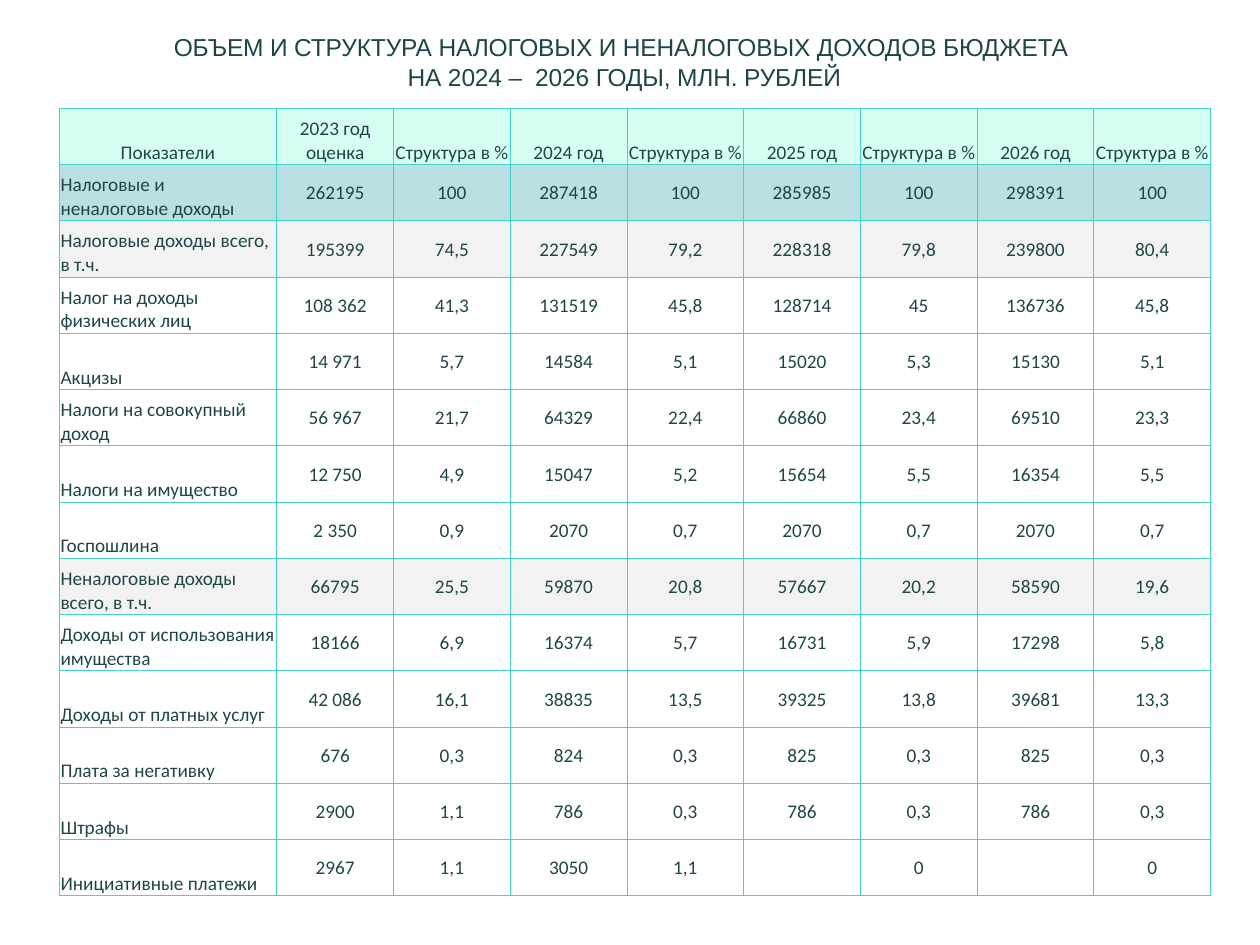
from copy import deepcopy
from dataclasses import dataclass

from lxml import etree
from pptx import Presentation
from pptx.dml.color import RGBColor
from pptx.enum.text import MSO_ANCHOR, PP_ALIGN
from pptx.oxml.ns import qn
from pptx.util import Cm, Pt

LEFT, CENTER = PP_ALIGN.LEFT, PP_ALIGN.CENTER
MIDDLE, BOTTOM = MSO_ANCHOR.MIDDLE, MSO_ANCHOR.BOTTOM


@dataclass(frozen=True)
class Theme:
    ink: str = "1E4649"
    line: str = "44D4C3"
    head: str = "D6FFF4"
    total: str = "BBE0E3"
    group: str = "F2F2F2"
    head_font: str = "Arial"
    body_font: str = "Calibri"
    head_size: int = 14
    body_size: int = 11
    rule: float = 0.5


THEME = Theme()

TITLE = (
    "ОБЪЕМ И СТРУКТУРА НАЛОГОВЫХ И НЕНАЛОГОВЫХ ДОХОДОВ БЮДЖЕТА \v"
    "НА 2024 –  2026 ГОДЫ, МЛН. РУБЛЕЙ"
)
SHARE = "Структура в %"
HEAD = ["Показатели"]
for year in ("2023 год оценка", "2024 год", "2025 год", "2026 год"):
    HEAD += [year, SHARE]

ROWS = [
    "Налоговые и неналоговые доходы|262195|100|287418|100|285985|100|298391|100",
    "Налоговые доходы всего, в т.ч.|195399|74,5|227549|79,2|228318|79,8|239800|80,4",
    "Налог на доходы физических лиц|108 362|41,3|131519|45,8|128714|45|136736|45,8",
    "Акцизы|14 971|5,7|14584|5,1|15020|5,3|15130|5,1",
    "Налоги на совокупный доход|56 967|21,7|64329|22,4|66860|23,4|69510|23,3",
    "Налоги на имущество|12 750|4,9|15047|5,2|15654|5,5|16354|5,5",
    "Госпошлина|2 350|0,9|2070|0,7|2070|0,7|2070|0,7",
    "Неналоговые доходы всего, в т.ч.|66795|25,5|59870|20,8|57667|20,2|58590|19,6",
    "Доходы от использования имущества|18166|6,9|16374|5,7|16731|5,9|17298|5,8",
    "Доходы от платных услуг|42 086|16,1|38835|13,5|39325|13,8|39681|13,3",
    "Плата за негативку|676|0,3|824|0,3|825|0,3|825|0,3",
    "Штрафы|2900|1,1|786|0,3|786|0,3|786|0,3",
    "Инициативные платежи|2967|1,1|3050|1,1||0||0",
]
GRID = [HEAD] + [row.split("|") for row in ROWS]
FILLS = {0: THEME.head, 1: THEME.total, 2: THEME.group, 8: THEME.group}


def apply(item, values):
    for name, value in values.items():
        setattr(item, name, value)


def style(runs, face, size):
    for run in runs:
        apply(run.font, {"name": face, "size": Pt(size)})
        run.font.color.rgb = RGBColor.from_string(THEME.ink)


def add_title(slide, box):
    frame = slide.shapes.add_textbox(*map(Cm, box)).text_frame
    apply(frame, {
        "word_wrap": True, "vertical_anchor": MIDDLE,
        "margin_left": 0, "margin_right": 0,
        "margin_top": Cm(0.03), "margin_bottom": 0,
    })
    para = frame.paragraphs[0]
    apply(para, {"text": TITLE, "alignment": CENTER, "space_before": Pt(1)})
    style(para.runs, THEME.head_font, THEME.head_size)
    for run in para.runs:
        run._r.get_or_add_rPr().set("spc", "-10")
    for gap in para._p.findall(qn("a:br")):
        gap.insert(0, deepcopy(para.runs[0]._r.rPr))


def add_lines(cell):
    props = cell._tc.get_or_add_tcPr()
    for side in "LRTB":
        line = etree.SubElement(props, qn(f"a:ln{side}"), w=str(Pt(THEME.rule)))
        fill = etree.SubElement(line, qn("a:solidFill"))
        etree.SubElement(fill, qn("a:srgbClr"), val=THEME.line)


def fill_cell(cell, text, label, head, tint):
    apply(cell, {
        "text": text,
        "vertical_anchor": BOTTOM if head or label else MIDDLE,
        "margin_left": Cm(0.03), "margin_right": Cm(0.03),
        "margin_top": Cm(0.03), "margin_bottom": 0,
    })
    add_lines(cell)
    if tint:
        cell.fill.solid()
        cell.fill.fore_color.rgb = RGBColor.from_string(tint)
    else:
        cell.fill.background()
    para = cell.text_frame.paragraphs[0]
    para.alignment = LEFT if label and not head else CENTER
    style(para.runs, THEME.body_font, THEME.body_size)


def add_grid(slide, box, first):
    width, height = box[2:]
    count = len(HEAD)
    table = slide.shapes.add_table(len(GRID), count, *map(Cm, box)).table
    apply(table, {"first_row": False, "horz_banding": False})
    for col, part in enumerate(table.columns):
        part.width = Cm((width - first) / (count - 1) if col else first)
    for row, part in enumerate(table.rows):
        part.height = Cm(height / len(GRID))
        for col, text in enumerate(GRID[row]):
            fill_cell(table.cell(row, col), text, col == 0, row == 0, FILLS.get(row))


def main():
    deck = Presentation()
    apply(deck, {"slide_width": Cm(25.4), "slide_height": Cm(19.05)})
    slide = deck.slides.add_slide(deck.slide_layouts[6])
    add_title(slide, (0.56, 0.61, 24.05, 1.24))
    add_grid(slide, (1.19, 2.18, 23.22, 15.88), 4.39)
    deck.save("out.pptx")


if __name__ == "__main__":
    main()
